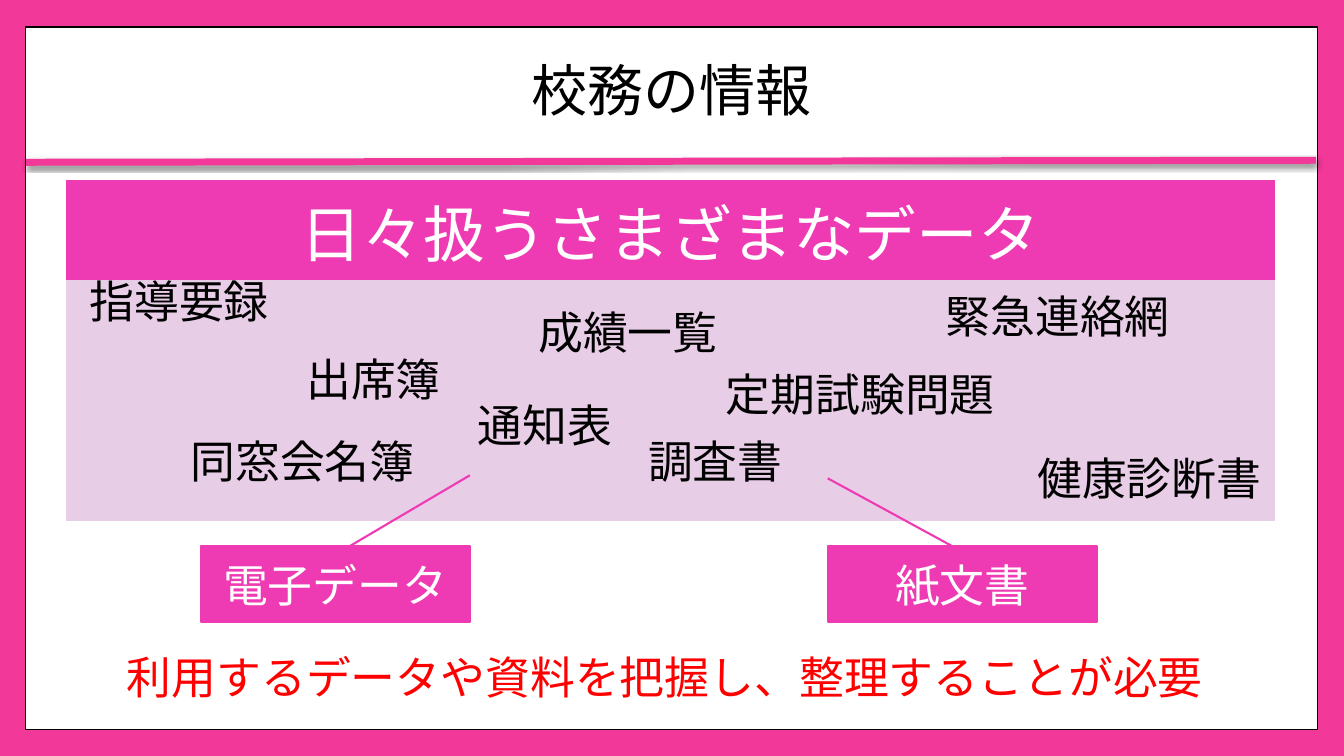
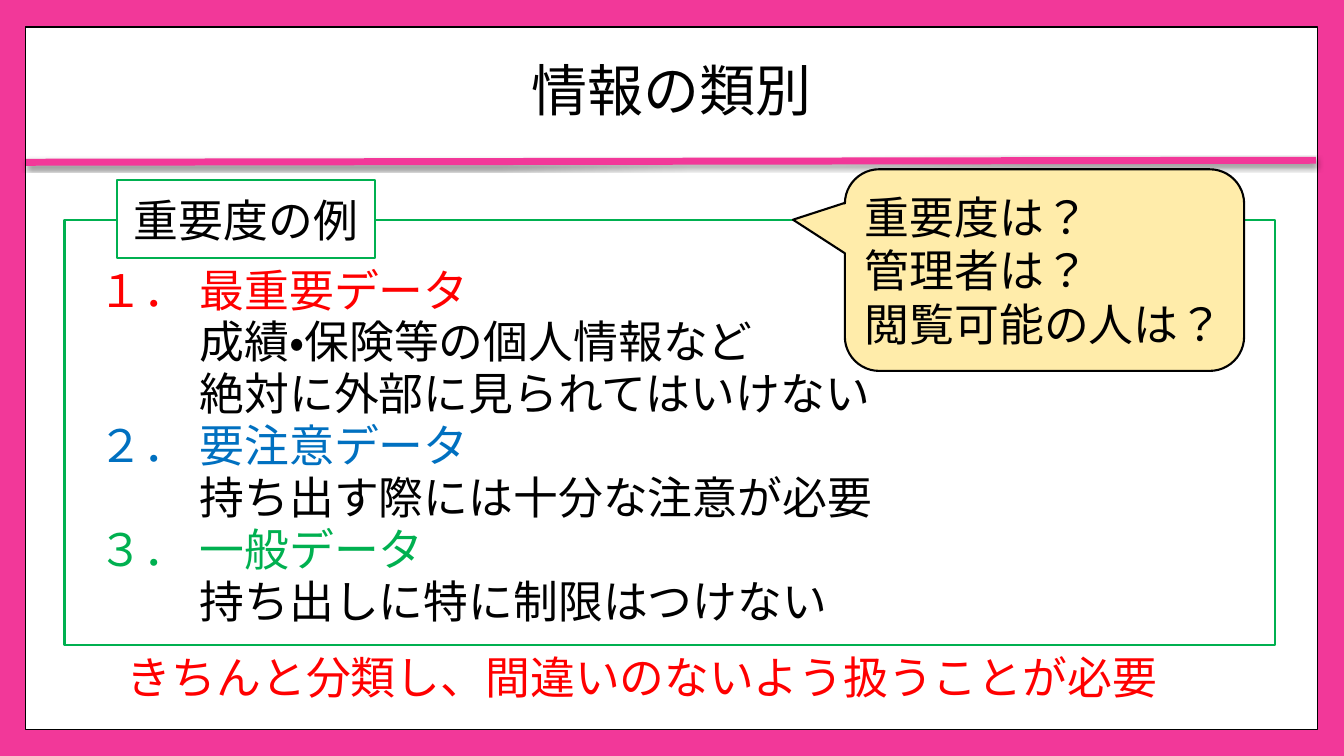
from dataclasses import dataclass

from lxml.etree import SubElement
from pptx import Presentation
from pptx.dml.color import RGBColor
from pptx.enum.lang import MSO_LANGUAGE_ID
from pptx.enum.shapes import MSO_CONNECTOR, MSO_SHAPE
from pptx.enum.text import MSO_ANCHOR, MSO_AUTO_SIZE, PP_ALIGN
from pptx.oxml.ns import qn
from pptx.util import Inches, Pt


@dataclass(frozen=True)
class Theme:
    """Hold the colours, fonts and type sizes of the deck."""
    frame: str = "F23899"
    pink: str = "EF3BB3"
    pale: str = "E8CDE7"
    cream: str = "FFECAA"
    white: str = "FFFFFF"
    black: str = "000000"
    red: str = "FF0000"
    blue: str = "0070C0"
    green: str = "00B050"
    face: str = "Arial"
    head: str = "Roboto"
    text: int = 32
    title: int = 40
    band: int = 44
    edge: float = 1.5


T = Theme()
NO_GRID = "{2D5ABB26-0587-4C30-8999-92F81FD0307C}"
PANEL = (0.65, 1.79, 12, 3.28)
WORDS = [
    ("指導要録", 0.14, 0.88), ("出席簿", 2.29, 1.65), ("同窓会名簿", 1.14, 2.46),
    ("通知表", 3.99, 2.11), ("成績一覧", 4.59, 1.18), ("調査書", 5.68, 2.46),
    ("定期試験問題", 6.45, 1.8), ("緊急連絡網", 8.63, 1.03), ("健康診断書", 9.54, 2.63),
]
RANKS = [
    ("１．\t最重要データ", T.red,
     ["成績・保険等の個人情報など", "絶対に外部に見られてはいけない"]),
    ("２．\t要注意データ", T.blue, ["持ち出す際には十分な注意が必要"]),
    ("３．\t一般データ", T.green, ["持ち出しに特に制限はつけない"]),
]


def inch(*nums):
    """Turn plain numbers into lengths."""
    return [Inches(num) for num in nums]


def tint(code):
    """Turn a hex code into a colour."""
    return RGBColor.from_string(code)


def style(para, color, size=T.text, face=T.face):
    """Format every run of a paragraph."""
    for run in para.runs:
        font = run.font
        font.name, font.size = face, Pt(size)
        font.color.rgb = tint(color)
        font.language_id = MSO_LANGUAGE_ID.JAPANESE


def write(frame, text, color, size=T.text, face=T.face, align=PP_ALIGN.CENTER):
    """Fill a text frame with styled lines."""
    frame.text = text
    for para in frame.paragraphs:
        para.alignment = align
        style(para, color, size, face)


def shape(slide, kind, box, fill=None, line=T.black, edge=T.edge):
    """Add a flat preset shape."""
    item = slide.shapes.add_shape(kind, *inch(*box))
    item.shadow.inherit = False
    if fill:
        item.fill.solid()
        item.fill.fore_color.rgb = tint(fill)
    else:
        item.fill.background()
    item.line.color.rgb = tint(line)
    item.line.width = Pt(edge)
    return item


def label(slide, text, left, top, color=T.black):
    """Add a one-line label, slightly wider than its signs."""
    wide = 0.2 + len(text) * 0.45
    item = slide.shapes.add_textbox(*inch(left, top, wide, 0.64))
    item.text_frame.word_wrap = False
    item.text_frame.auto_size = MSO_AUTO_SIZE.SHAPE_TO_FIT_TEXT
    write(item.text_frame, text, color, align=PP_ALIGN.LEFT)


def shade(line):
    """Give a line a soft shadow below it."""
    effects = SubElement(line.element.spPr, qn("a:effectLst"))
    outer = SubElement(effects, qn("a:outerShdw"), blurRad=str(Pt(3)),
                       dist=str(Pt(2)), dir="5400000", rotWithShape="0")
    black = SubElement(outer, qn("a:srgbClr"), val=T.black)
    SubElement(black, qn("a:alpha"), val="45000")


def dress(master, slide):
    """Set the shared frame, sheet and rule on the master."""
    back = master.background.fill
    back.solid()
    back.fore_color.rgb = tint(T.frame)
    sheet = shape(slide, MSO_SHAPE.RECTANGLE, (0.25, 0.27, 12.82, 6.97), T.white, edge=1)
    rule = slide.shapes.add_connector(MSO_CONNECTOR.STRAIGHT, *inch(0.26, 1.61, 13.05, 1.59))
    rule.line.color.rgb = tint(T.frame)
    rule.line.width = Pt(5)
    shade(rule)
    tree = master.shapes.element
    for spot, item in enumerate((sheet, rule), 2):
        tree.insert(spot, item.element)


def place(item, box):
    """Move a placeholder into a box."""
    item.left, item.top, item.width, item.height = inch(*box)
    item.text_frame.auto_size = MSO_AUTO_SIZE.NONE


def head(slide, text):
    """Set the slide title."""
    title = slide.shapes.title
    place(title, (0.26, 0.36, 12.8, 1.14))
    title.text_frame.vertical_anchor = MSO_ANCHOR.MIDDLE
    write(title.text_frame, text, T.black, T.title, T.head)
    title.text_frame.paragraphs[0].line_spacing = 0.9


def panel(slide, box, text):
    """Draw the banded table and scatter the words on it."""
    left, top, wide, high = box
    frame = slide.shapes.add_table(2, 1, *inch(*box))
    for node in frame.element.iter(qn("a:tableStyleId")):
        node.text = NO_GRID
    table = frame.table
    table.columns[0].width = Inches(wide)
    for row, tall, fill in zip(table.rows, (0.89, high - 0.89), (T.pink, T.pale)):
        row.height = Inches(tall)
        row.cells[0].fill.solid()
        row.cells[0].fill.fore_color.rgb = tint(fill)
    write(table.cell(0, 0).text_frame, text, T.white, T.band)
    for word, right, down in WORDS:
        label(slide, word, left + right, top + down)


def tag(slide, text, left, start):
    """Add a pink tag whose line starts at the given share of its box."""
    item = shape(slide, MSO_SHAPE.LINE_CALLOUT_1, (left, 5.42, 2.67, 0.75), T.pink, T.pink)
    for spot, share in enumerate((*start, 0.09, 0.51)):
        item.adjustments[spot] = share
    write(item.text_frame, text, T.white)


def ranks(slide, box):
    """Fill the body with the ranked list."""
    body = slide.placeholders[1]
    place(body, box)
    rows = []
    for name, color, notes in RANKS:
        rows.append((name, color, -1))
        rows += [(note, T.black, 0) for note in notes]
    body.text_frame.text = "\n".join(row[0] for row in rows)
    for para, (_, color, hang) in zip(body.text_frame.paragraphs, rows):
        para.line_spacing = 0.6
        para.space_before = Pt(14)
        style(para, color)
        props = para._p.get_or_add_pPr()
        props.set("marL", str(Inches(1.05)))
        props.set("indent", str(Inches(hang)))
        SubElement(props, qn("a:buNone"))


def group(slide, box, text):
    """Draw the green outline and its name plate."""
    left, top = box[:2]
    shape(slide, MSO_SHAPE.RECTANGLE, box, line=T.green)
    plate = shape(slide, MSO_SHAPE.RECTANGLE, (left + 0.52, top - 0.39, 2.56, 0.77),
                  T.white, T.green)
    write(plate.text_frame, text, T.black)


def speech(slide, box, text):
    """Draw the speech bubble."""
    item = shape(slide, MSO_SHAPE.ROUNDED_RECTANGULAR_CALLOUT, box, T.cream)
    for spot, share in enumerate((-0.63, -0.25, 0.17)):
        item.adjustments[spot] = share
    write(item.text_frame, text, T.black, align=PP_ALIGN.LEFT)


def data(slide):
    """Build the slide on school data."""
    head(slide, "校務の情報")
    panel(slide, PANEL, "日々扱うさまざまなデータ")
    tag(slide, "電子データ", 1.99, (-0.94, 1))
    tag(slide, "紙文書", 8.21, (-0.9, 0))
    label(slide, "利用するデータや資料を把握し、整理することが必要", 1.16, 6.4, T.red)


def classes(slide):
    """Build the slide on data ranks."""
    head(slide, "情報の類別")
    ranks(slide, (0.83, 2.74, 12, 3.6))
    label(slide, "きちんと分類し、間違いのないよう扱うことが必要", 1.16, 6.4, T.red)
    group(slide, (0.64, 2.18, 12.01, 4.22), "重要度の例")
    speech(slide, (8.38, 1.68, 3.96, 2), "重要度は？\n管理者は？\n閲覧可能の人は？")


def main():
    """Build and save the deck."""
    deck = Presentation()
    deck.slide_width, deck.slide_height = inch(13.33, 7.5)
    first = deck.slides.add_slide(deck.slide_layouts[5])
    dress(deck.slide_master, first)
    data(first)
    classes(deck.slides.add_slide(deck.slide_layouts[1]))
    deck.save("out.pptx")


if __name__ == "__main__":
    main()
